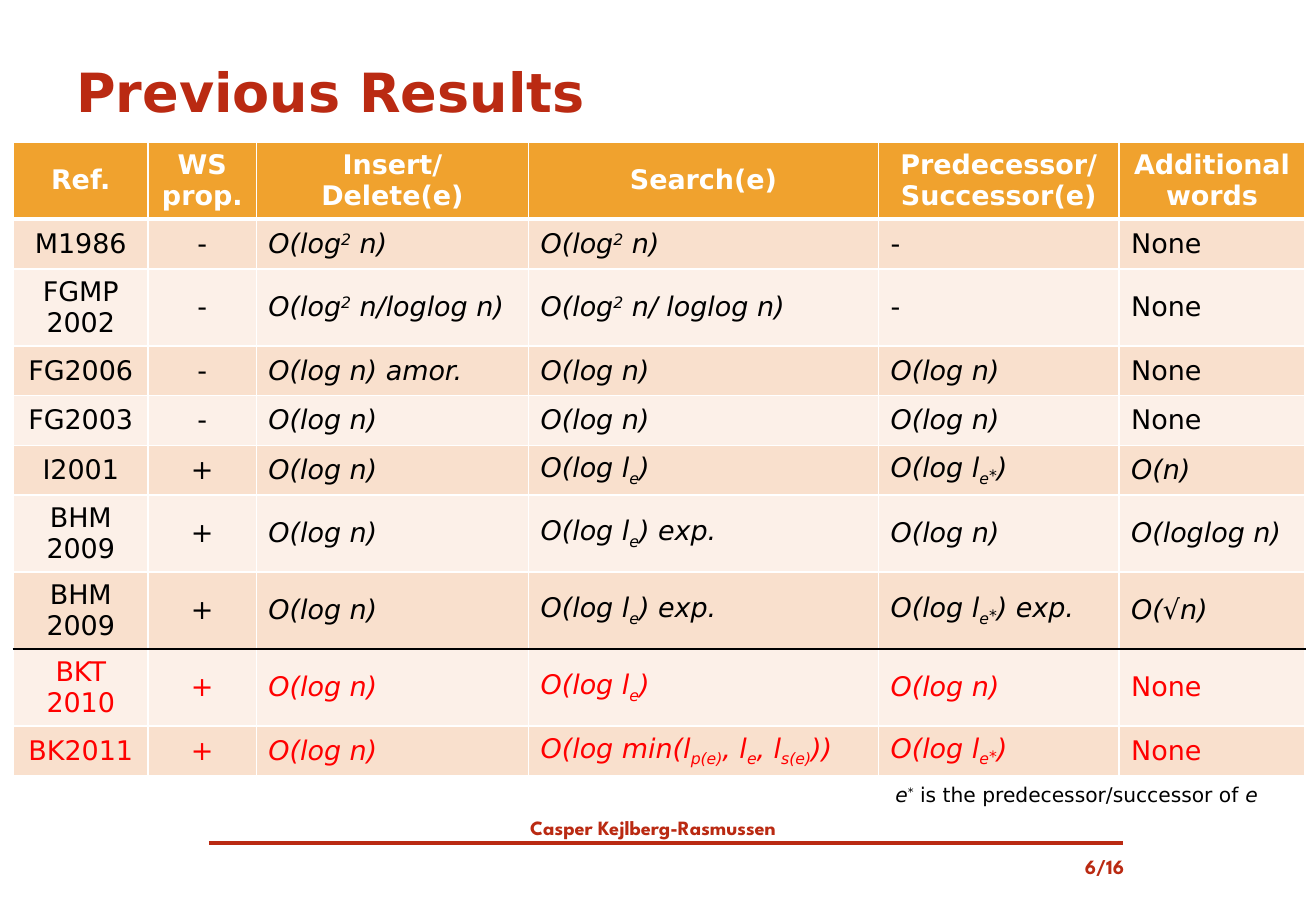
from dataclasses import dataclass
from lxml.etree import SubElement
from pptx import Presentation
from pptx.dml.color import RGBColor
from pptx.enum.shapes import MSO_CONNECTOR
from pptx.enum.text import MSO_ANCHOR as Anchor, PP_ALIGN as Align
from pptx.oxml.ns import qn
from pptx.util import Inches, Pt

HEAD = ["Ref.", "WS prop.", "Insert/ Delete(e)", "Search(e)",
        "Predecessor/ Successor(e)", "Additional words"]
LOGN = "O(log n)"
LOGE = "O(log l|_e|)"
LOGP = "O(log l|_e|~*|)"
ROWS = [
    ["M1986", "-", "O(log|^2| n)", "O(log|^2| n)", "-", "None"],
    ["FGMP 2002", "-", "O(log|^2| n/loglog n)", "O(log|^2| n/ loglog n)", "-", "None"],
    ["FG2006", "-", LOGN + " amor.", LOGN, LOGN, "None"],
    ["FG2003", "-", LOGN, LOGN, LOGN, "None"],
    ["I2001", "+", LOGN, LOGE, LOGP, "O(n)"],
    ["BHM 2009", "+", LOGN, LOGE + " exp.", LOGN, "O(loglog n)"],
    ["BHM 2009", "+", LOGN, LOGE + " exp.", LOGP + " exp.", "O(√n)"],
    ["BKT 2010", "+", LOGN, LOGE, LOGN, "None"],
    ["BK2011", "+", LOGN, "O(log min(l|_p(e)|, l|_e|, l|_s(e)|))", LOGP, "None"],
]
WIDTHS = [1.11, 0.89, 2.24, 2.88, 1.98, 1.53]
LOW, TALL = 0.41, 0.61
SPLIT = 7
BASE = {"^": "30000", "_": "-25000", "~": "-15000"}


@dataclass(frozen=True)
class Theme:
    brand: str = "BA2A12"
    head: str = "F0A22E"
    odd: str = "F9E0CD"
    even: str = "FCF0E8"
    white: str = "FFFFFF"
    black: str = "000000"
    red: str = "FF0000"
    body: str = "DejaVu Sans"
    foot: str = "League Spartan"
    title: int = 32
    cell: int = 16
    small: int = 12


T = Theme()


def write(frame, text, size, color, face=T.body, bold=False, italic=False, align=Align.LEFT):
    para = frame.paragraphs[0]
    para.alignment = align
    font = para.font
    font.name, font.size, font.bold, font.italic = face, Pt(size), bold, italic
    font.color.rgb = RGBColor.from_string(color)
    for part in text.split("|"):
        run = para.add_run()
        run.text = part[1:] if part[0] in BASE else part
        if part[0] in BASE:
            run._r.get_or_add_rPr().set("baseline", BASE[part[0]])
    return para


def add_text(slide, box, text, size, color, **style):
    frame = slide.shapes.add_textbox(*map(Inches, box)).text_frame
    frame.word_wrap = True
    frame.vertical_anchor = Anchor.MIDDLE
    return write(frame, text, size, color, **style)


def add_edge(cell, side, color, width=1):
    line = SubElement(cell._tc.get_or_add_tcPr(), qn("a:ln" + side), w=str(Pt(width)))
    fill = SubElement(line, qn("a:solidFill"))
    SubElement(fill, qn("a:srgbClr"), val=color)


def add_results(slide):
    grid = [HEAD] + ROWS
    highs = [TALL if " " in row[0] or row is HEAD else LOW for row in grid]
    box = (0.11, 1.17, sum(WIDTHS), sum(highs))
    table = slide.shapes.add_table(len(grid), len(HEAD), *map(Inches, box)).table
    for col, wide in zip(table.columns, WIDTHS):
        col.width = Inches(wide)
    for r, row in enumerate(grid):
        table.rows[r].height = Inches(highs[r])
        top = r == 0
        fill = T.head if top else T.odd if r % 2 else T.even
        ink = T.white if top else T.red if r > SPLIT else T.black
        for c, text in enumerate(row):
            cell = table.cell(r, c)
            cell.vertical_anchor = Anchor.MIDDLE
            add_edge(cell, "L", T.white)
            add_edge(cell, "R", T.white)
            add_edge(cell, "T", T.black if r == SPLIT + 1 else T.white, 3 if r == 1 else 1)
            add_edge(cell, "B", T.black if r == SPLIT else T.white, 3 if top else 1)
            cell.fill.solid()
            cell.fill.fore_color.rgb = RGBColor.from_string(fill)
            write(cell.text_frame, text, T.cell, ink, bold=top,
                  italic=text.startswith("O("),
                  align=Align.CENTER if top or c < 2 else Align.LEFT)


def add_foot(slide):
    style = dict(face=T.foot, bold=True)
    add_text(slide, (0.53, 6.66, 9.69, 0.3), "Casper Kejlberg-Rasmussen",
             T.small, T.brand, align=Align.CENTER, **style)
    add_text(slide, (8.37, 6.98, 0.98, 0.3), "6/16",
             T.small, T.brand, align=Align.RIGHT, **style)
    ends = map(Inches, (1.72, 6.94, 9.24, 6.94))
    rule = slide.shapes.add_connector(MSO_CONNECTOR.STRAIGHT, *ends)
    rule.line.color.rgb = RGBColor.from_string(T.brand)
    rule.line.width = Pt(2.25)
    SubElement(rule._element.spPr, qn("a:effectLst"))


def main():
    deck = Presentation()
    deck.slide_width, deck.slide_height = Inches(10.83), Inches(7.5)
    slide = deck.slides.add_slide(deck.slide_layouts[6])
    add_foot(slide)
    add_text(slide, (0.53, 0.36, 9.75, 0.77), "Previous Results", T.title, T.brand, bold=True)
    add_results(slide)
    note = add_text(slide, (7.27, 6.39, 3.23, 0.3),
                    "e|^*| is the predecessor/successor of |e", T.small, T.black)
    for run in note.runs[0], note.runs[1], note.runs[3]:
        run.font.italic = True
    deck.save("out.pptx")


if __name__ == "__main__":
    main()
